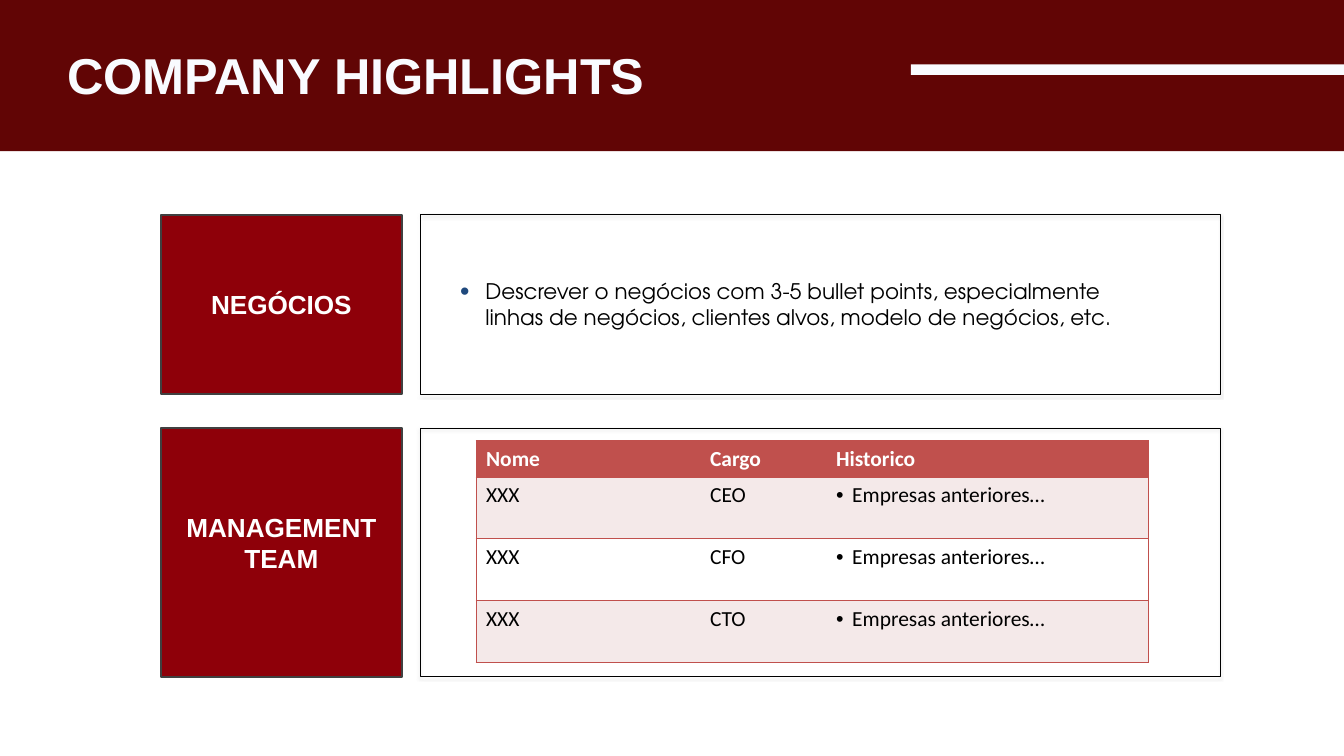
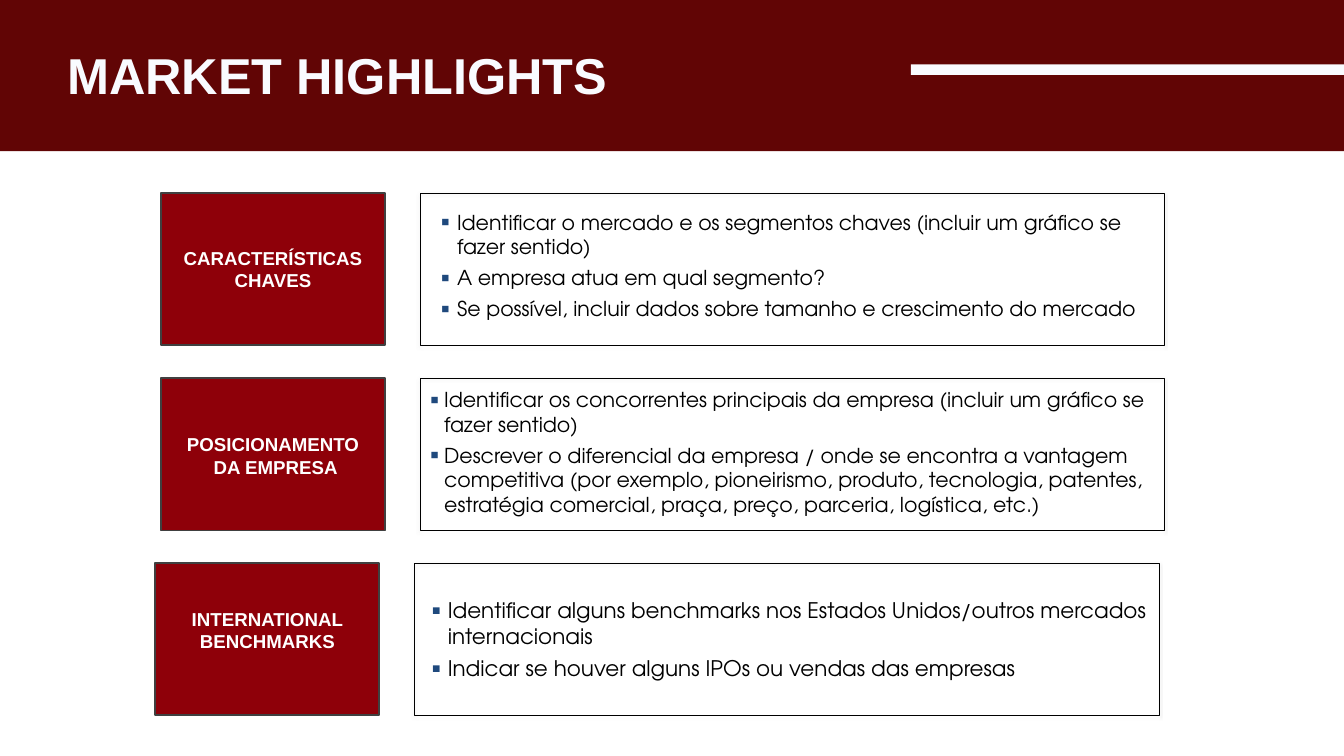
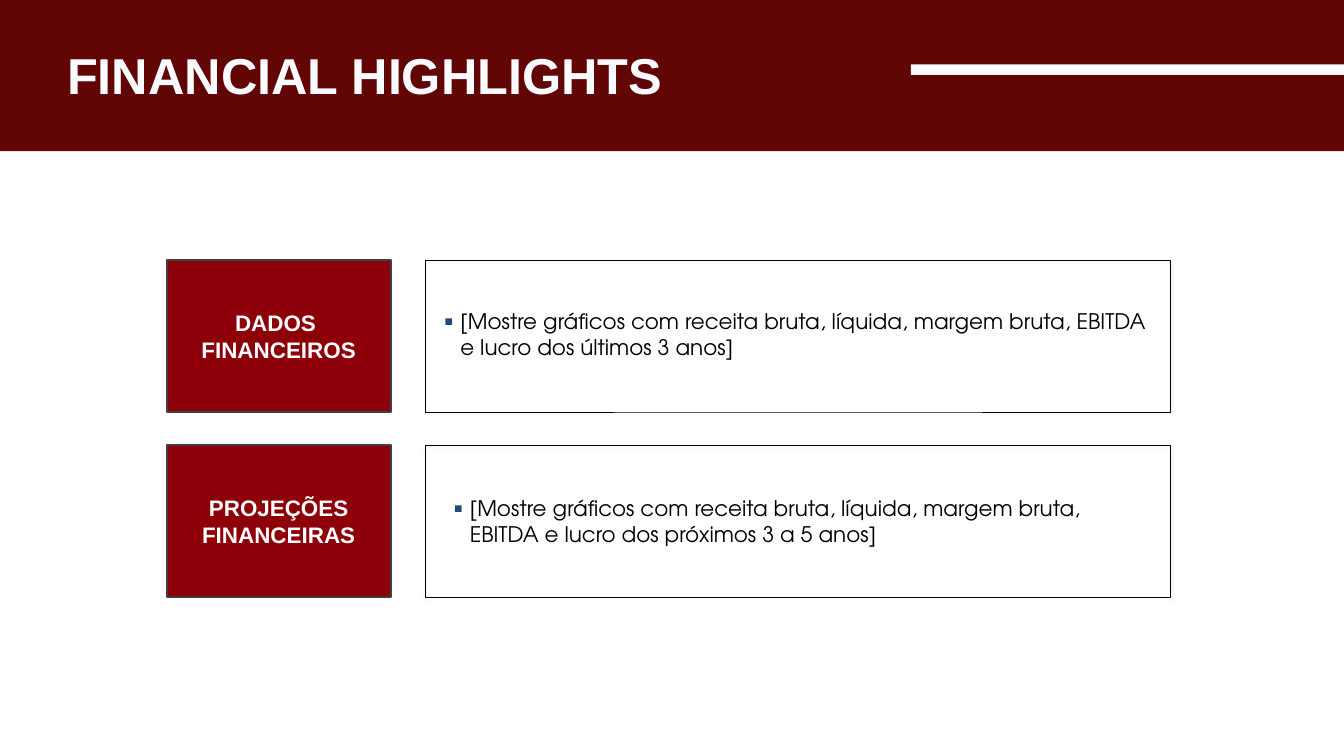
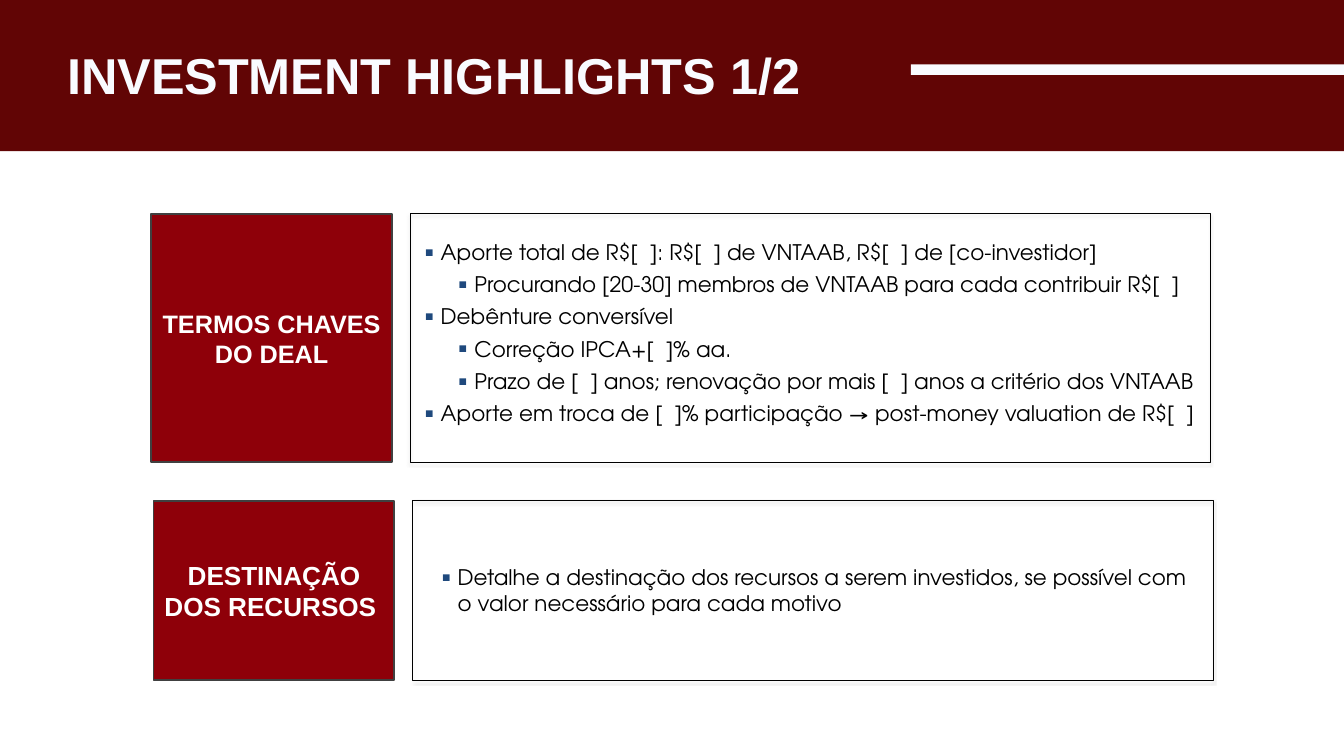
from lxml.etree import SubElement
from pptx import Presentation
from pptx.dml.color import RGBColor
from pptx.enum.shapes import MSO_SHAPE
from pptx.enum.text import MSO_ANCHOR, PP_ALIGN
from pptx.oxml.ns import qn
from pptx.util import Pt

DARK_RED = RGBColor(0x61, 0x05, 0x05)
RED = RGBColor(0x8E, 0x00, 0x09)
TABLE_RED = RGBColor(0xC0, 0x50, 0x4D)
PINK = RGBColor(0xF4, 0xE9, 0xE9)
PALE = RGBColor(0xF9, 0xFB, 0xFF)
WHITE = RGBColor(0xFF, 0xFF, 0xFF)
BLACK = RGBColor(0, 0, 0)
GREY = RGBColor(0x40, 0x40, 0x40)
SHADOW = RGBColor(0x80, 0x80, 0x80)
BLUE = RGBColor(0x1F, 0x49, 0x7D)

HEAD_FONT, BODY_FONT, TABLE_FONT = "Arial", "TeX Gyre Adventor", "Calibri"
WIDTH, HEIGHT = 1440, 810
BOX_OFFSET = 277.5
LARGE = (258, 857.5)
SMALL = (240, 798)
NO_INSETS = (0, 0, 0, 0)
INSETS = (7.2, 3.6, 7.2, 3.6)


def add_color(parent, color):
    fill = SubElement(parent, qn("a:solidFill"))
    SubElement(fill, qn("a:srgbClr"), val=str(color))


def set_insets(target, insets):
    left, top, right, bottom = insets
    target.margin_left, target.margin_top = Pt(left), Pt(top)
    target.margin_right, target.margin_bottom = Pt(right), Pt(bottom)


def add_text(tf, text, first=False, size=23, font=BODY_FONT, color=BLACK,
             bold=False, align=PP_ALIGN.LEFT, level=0, before=0):
    p = tf.paragraphs[0] if first else tf.add_paragraph()
    p.alignment, p.level, p.space_before = align, level, Pt(before)
    r = p.add_run()
    r.text = text
    r.font.size, r.font.name, r.font.bold = Pt(size), font, bold
    r.font.color.rgb = color
    return p


def set_bullet(p, char, indent, left=None, color=None, percent=100):
    pPr = p._p.get_or_add_pPr()
    pPr.set("marL", str(Pt(left or indent)))
    pPr.set("indent", str(-Pt(indent)))
    if color is not None:
        buClr = SubElement(pPr, qn("a:buClr"))
        SubElement(buClr, qn("a:srgbClr"), val=str(color))
    SubElement(pPr, qn("a:buSzPct"), val=str(percent * 1000))
    SubElement(pPr, qn("a:buFont"), typeface="Arial")
    SubElement(pPr, qn("a:buChar"), char=char)


def add_rect(s, left, top, width, height, fill=None, line=None, line_width=1):
    sp = s.shapes.add_shape(MSO_SHAPE.RECTANGLE, Pt(left), Pt(top), Pt(width), Pt(height))
    sp.shadow.inherit = False
    if fill is None:
        sp.fill.background()
    else:
        sp.fill.solid()
        sp.fill.fore_color.rgb = fill
    if line is None:
        sp.line.fill.background()
    else:
        sp.line.color.rgb = line
        sp.line.width = Pt(line_width)
    return sp


def add_shadow(sp):
    effects = sp._element.spPr.find(qn("a:effectLst"))
    shadow = SubElement(effects, qn("a:outerShdw"), blurRad=str(Pt(3.1)),
                        dist=str(Pt(1.8)), dir="5400000", rotWithShape="0")
    color = SubElement(shadow, qn("a:srgbClr"), val=str(SHADOW))
    SubElement(color, qn("a:alpha"), val="35000")


def add_textbox(s, left, top, width, height, insets=INSETS):
    tf = s.shapes.add_textbox(Pt(left), Pt(top), Pt(width), Pt(height)).text_frame
    tf.word_wrap = True
    set_insets(tf, insets)
    return tf


def add_slide(prs, title):
    s = prs.slides.add_slide(prs.slide_layouts[6])
    add_rect(s, 0, 0, WIDTH, 162, fill=DARK_RED)
    tf = add_textbox(s, 72, 46.8, 852.5, 67, (0, 0.9, 0, 0))
    add_text(tf, title, first=True, size=54, font=HEAD_FONT, color=PALE, bold=True, before=0.9)
    add_rect(s, 976, 69, WIDTH - 976, 11.25, fill=PALE)
    return s


def add_row(s, left, top, height, widths, label, size, extra_top=0, extra_bottom=0):
    label_width, box_width = widths
    add_shadow(add_rect(s, left + BOX_OFFSET, top, box_width, height, line=BLACK, line_width=0.75))
    sp = add_rect(s, left, top, label_width, height, fill=RED, line=GREY, line_width=2)
    tf = sp.text_frame
    tf.word_wrap = True
    tf.vertical_anchor = MSO_ANCHOR.MIDDLE
    set_insets(tf, (7.2, 3.6 + extra_top, 7.2, 3.6 + extra_bottom))
    for i, line in enumerate(label):
        add_text(tf, line, first=i == 0, size=size, font=HEAD_FONT, color=WHITE,
                 bold=True, align=PP_ALIGN.CENTER)


def add_bullets(s, left, top, width, height, items, size=23, char="▪",
                indent=17.25, margin=None, insets=NO_INSETS):
    tf = add_textbox(s, left, top, width, height, insets)
    for i, (level, text) in enumerate(items):
        p = add_text(tf, text, first=i == 0, size=size, level=level, before=0.3 * size)
        set_bullet(p, char, indent, (margin or indent) + 36 * (level - 1), BLUE, 125)


def set_borders(cell, sides):
    tcPr = cell._tc.get_or_add_tcPr()
    for i, side in enumerate("LRTB"):
        ln = SubElement(tcPr, qn("a:ln" + side), w=str(Pt(1)))
        if side in sides:
            add_color(ln, TABLE_RED)
        else:
            SubElement(ln, qn("a:noFill"))
        tcPr.insert(i, ln)


def add_team_table(s, left, top, col_widths, row_heights, rows):
    frame = s.shapes.add_table(len(rows), len(col_widths), Pt(left), Pt(top),
                               Pt(sum(col_widths)), Pt(sum(row_heights)))
    table = frame.table
    for column, width in zip(table.columns, col_widths):
        column.width = Pt(width)
    last = len(col_widths) - 1
    for i, values in enumerate(rows):
        table.rows[i].height = Pt(row_heights[i])
        header = i == 0
        for j, value in enumerate(values):
            cell = table.cell(i, j)
            set_insets(cell, (10.8, 5.4, 10.8, 5.4))
            cell.fill.solid()
            cell.fill.fore_color.rgb = TABLE_RED if header else PINK if i % 2 else WHITE
            p = add_text(cell.text_frame, value, first=True, font=TABLE_FONT,
                         color=WHITE if header else BLACK, bold=header)
            if j == last and not header:
                set_bullet(p, "•", 17.25)
            set_borders(cell, "TB" + "L" * (j == 0) + "R" * (j == last))


def company(prs):
    s = add_slide(prs, "COMPANY HIGHLIGHTS")
    team = [("Nome", "Cargo", "Historico")]
    team += [("XXX", role, "Empresas anteriores…") for role in ("CEO", "CFO", "CTO")]
    add_team_table(s, 510, 472, (240, 135, 345), (39, 66.25, 66.25, 66.25), team)
    add_row(s, 172.5, 458.5, 266.5, LARGE, ("MANAGEMENT", "TEAM"), 28, extra_bottom=21)
    add_row(s, 172.5, 230, 192.5, LARGE, ("NEGÓCIOS",), 28)
    add_bullets(s, 450, 294.5, 786, 62.5, [
        (1, "Descrever o negócios com 3-5 bullet points, especialmente linhas de negócios, "
            "clientes alvos, modelo de negócios, etc.")],
        char="•", indent=27, margin=63, insets=INSETS)


def market(prs):
    s = add_slide(prs, "MARKET HIGHLIGHTS")
    add_row(s, 172.5, 405.5, 163, SMALL, ("POSICIONAMENTO", " DA EMPRESA"), 20, extra_top=2)
    add_row(s, 172.5, 207, 163, SMALL, ("CARACTERÍSTICAS CHAVES",), 20)
    add_row(s, 166.5, 603.5, 163, SMALL, ("INTERNATIONAL", "BENCHMARKS"), 20, extra_bottom=20)
    add_bullets(s, 472.5, 224.75, 769.5, 157, [
        (1, "Identificar o mercado e os segmentos chaves (incluir um gráfico se fazer sentido)"),
        (1, "A empresa atua em qual segmento?"),
        (1, "Se possível, incluir dados sobre tamanho e crescimento do mercado")], size=22)
    add_bullets(s, 461, 414.75, 787, 175.5, [
        (1, "Identificar os concorrentes principais da empresa (incluir um gráfico se fazer sentido)"),
        (1, "Descrever o diferencial da empresa / onde se encontra a vantagem competitiva "
            "(por exemplo, pioneirismo, produto, tecnologia, patentes, estratégia comercial, "
            "praça, preço, parceria, logística, etc.)")], size=22, indent=15)
    add_bullets(s, 462.5, 640, 769.5, 128, [
        (1, "Identificar alguns benchmarks nos Estados Unidos/outros mercados internacionais"),
        (1, "Indicar se houver alguns IPOs ou vendas das empresas")])


def financial(prs):
    s = add_slide(prs, "FINANCIAL HIGHLIGHTS")
    add_row(s, 178.5, 477, 163, SMALL, ("PROJEÇÕES FINANCEIRAS",), 24)
    add_row(s, 178.5, 278.5, 163, SMALL, ("DADOS ", "FINANCEIROS"), 24)
    add_bullets(s, 476, 330, 769.5, 90.5, [
        (1, "[Mostre gráficos com receita bruta, líquida, margem bruta, EBITDA "
            "e lucro dos últimos 3 anos]")])
    add_bullets(s, 479, 527, 751.5, 62.5, [
        (1, "[Mostre gráficos com receita bruta, líquida, margem bruta, EBITDA "
            "e lucro dos próximos 3 a 5 anos]")], insets=INSETS)


def investment(prs):
    s = add_slide(prs, "INVESTMENT HIGHLIGHTS 1/2")
    add_row(s, 162, 229, 266.5, LARGE, ("TERMOS CHAVES DO DEAL",), 27)
    add_row(s, 164.5, 536.5, 192.5, LARGE, ("DESTINAÇÃO DOS RECURSOS ",), 28)
    add_bullets(s, 455, 256.25, 844.5, 242.5, [
        (1, "Aporte total de R$[  ]: R$[  ] de VNTAAB, R$[  ] de [co-investidor]"),
        (2, "Procurando [20-30] membros de VNTAAB para cada contribuir R$[  ]"),
        (1, "Debênture conversível"),
        (2, "Correção IPCA+[  ]% aa."),
        (2, "Prazo de [  ] anos; renovação por mais [  ] anos a critério dos VNTAAB"),
        (1, "Aporte em troca de [  ]% participação → post-money valuation de R$[  ]")])
    add_bullets(s, 466, 601, 834.5, 62.5, [
        (1, "Detalhe a destinação dos recursos a serem investidos, se possível com o valor "
            "necessário para cada motivo")], insets=INSETS)


def main():
    prs = Presentation()
    prs.slide_width, prs.slide_height = Pt(WIDTH), Pt(HEIGHT)
    for build in (company, market, financial, investment):
        build(prs)
    prs.save("out.pptx")


if __name__ == "__main__":
    main()
